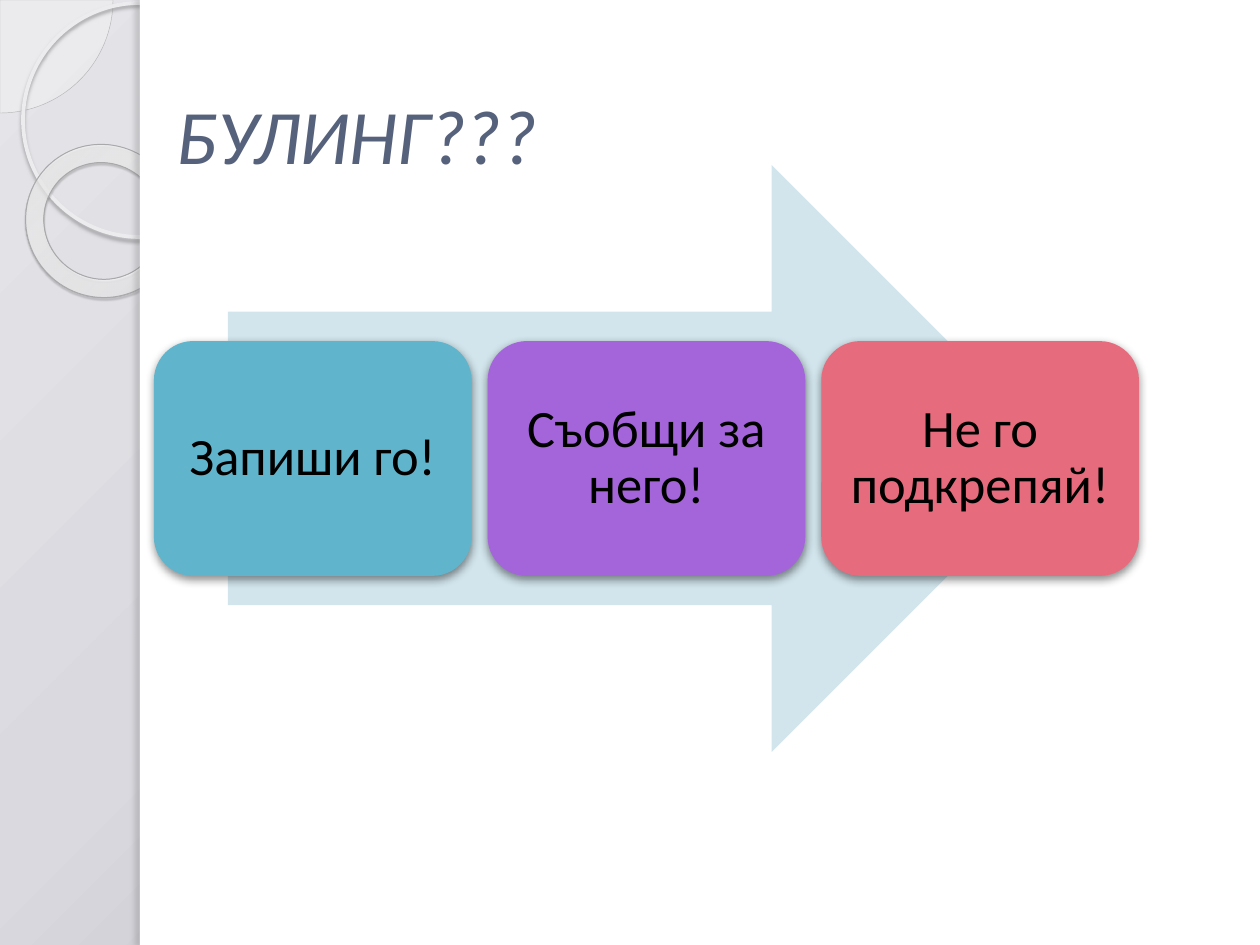
from dataclasses import dataclass

from lxml import etree
from pptx import Presentation
from pptx.dml.color import RGBColor
from pptx.enum.shapes import MSO_SHAPE
from pptx.enum.text import MSO_ANCHOR, PP_ALIGN
from pptx.oxml.ns import qn
from pptx.util import Pt

PX = 914400 / 126
PIE, OVAL, DONUT = MSO_SHAPE.PIE, MSO_SHAPE.OVAL, MSO_SHAPE.DONUT
RECTANGLE, ROUNDED = MSO_SHAPE.RECTANGLE, MSO_SHAPE.ROUNDED_RECTANGLE
RIGHT_ARROW = MSO_SHAPE.RIGHT_ARROW
MIDDLE, CENTER, LEFT = MSO_ANCHOR.MIDDLE, PP_ALIGN.CENTER, PP_ALIGN.LEFT


@dataclass(frozen=True)
class Theme:
    """Colours, type and shadows of the slide."""
    font: str = "Calibri"
    title_size: int = 44
    card_size: int = 30
    title: str = "56617C"
    text: str = "000000"
    panel: str = "FFFFFF"
    arrow: str = "D2E5EC"
    cards: tuple = ("60B5CC", "A465DA", "E66C7D")
    backdrop: tuple = ((0, "E5E5E9", 100), (40, "D9D9DF", 100), (100, "A2A2A7", 100))
    donut: tuple = ((0, "FAFAFA", 70), (70, "FDFDFD", 55), (100, "B9B9BF", 60))
    quarter: str = "F8F8F8"
    quarter_line: tuple = ("B5B5B8", 0.25)
    ring_line: tuple = ("ECECEF", 2.15)
    donut_line: tuple = ("A9A9AC", 0.58)
    ring_shadow: tuple = ("9C9C9F", 85, 2, 2, 90)
    donut_shadow: tuple = ("4E4E4F", 35, 1, 1.2, 75)
    edge_shadow: tuple = ("69696A", 25, 3, 3, 180)
    card_shadow: tuple = ("000000", 43, 5, 2, 90)


THEME = Theme()


def px(length):
    """Turn px into EMU."""
    return round(length * PX)


def add_color(parent, color, opacity):
    """Append a colour with an opacity in percent."""
    node = etree.SubElement(parent, qn("a:srgbClr"), val=color)
    if opacity < 100:
        etree.SubElement(node, qn("a:alpha"), val=str(opacity * 1000))


def use_radial(solid, stops, focus):
    """Replace a solid fill with a circular gradient around a focus box."""
    gradient = etree.Element(qn("a:gradFill"), rotWithShape="1")
    stop_list = etree.SubElement(gradient, qn("a:gsLst"))
    for position, color, opacity in stops:
        stop = etree.SubElement(stop_list, qn("a:gs"), pos=str(position * 1000))
        add_color(stop, color, opacity)
    circle = etree.SubElement(gradient, qn("a:path"), path="circle")
    sides = {side: str(value * 1000) for side, value in zip("ltrb", focus)}
    etree.SubElement(circle, qn("a:fillToRect"), **sides)
    solid.getparent().replace(solid, gradient)


def add_figure(slide, kind, box, fill=None, opacity=100, line=None, shadow=None):
    """Add a preset shape with its fill, line and shadow."""
    figure = slide.shapes.add_shape(kind, *map(px, box))
    figure.shadow.inherit = False
    if fill:
        figure.fill.solid()
        figure.fill.fore_color.rgb = RGBColor.from_string(fill)
        if opacity < 100:
            color = figure._element.xpath("./p:spPr/a:solidFill/a:srgbClr")[0]
            etree.SubElement(color, qn("a:alpha"), val=str(opacity * 1000))
    else:
        figure.fill.background()
    if line:
        figure.line.color.rgb = RGBColor.from_string(line[0])
        figure.line.width = Pt(line[1])
    else:
        figure.line.fill.background()
    if shadow:
        color, strength, blur, distance, angle = shadow
        effects = figure._element.xpath("./p:spPr/a:effectLst")[0]
        outer = etree.SubElement(effects, qn("a:outerShdw"), blurRad=str(Pt(blur)),
                                 dist=str(Pt(distance)), dir=str(angle * 60000),
                                 algn="ctr", rotWithShape="0")
        add_color(outer, color, strength)
    return figure


def write(frame, words, size, color, align, italic=False):
    """Write one wrapped, vertically centred paragraph."""
    frame.word_wrap = True
    frame.vertical_anchor = MIDDLE
    paragraph = frame.paragraphs[0]
    paragraph.alignment = align
    run = paragraph.add_run()
    run.text = words
    run.font.name = THEME.font
    run.font.size = Pt(size)
    run.font.italic = italic
    run.font.color.rgb = RGBColor.from_string(color)
    return paragraph


def draw_sidebar(slide, box):
    """Draw the gradient backdrop, its circles and the white panel beside them."""
    left, top, width, height = box
    slide.background.fill.solid()
    slide.background.fill.fore_color.rgb = RGBColor.from_string(THEME.panel)
    use_radial(slide.element.xpath(".//p:bgPr/a:solidFill")[0],
               THEME.backdrop, (-24, -20, 124, 120))
    quarter = add_figure(slide, PIE, (left - 113, top - 113, 226, 226),
                         THEME.quarter, 33, THEME.quarter_line)
    quarter.adjustments[0], quarter.adjustments[1] = 0, 54
    add_figure(slide, OVAL, (left + 23, top + 3, 234, 234),
               line=THEME.ring_line, shadow=THEME.ring_shadow)
    donut = add_figure(slide, DONUT, (left + 25, top + 145, 155, 152), THEME.panel,
                       line=THEME.donut_line, shadow=THEME.donut_shadow)
    donut.adjustments[0] = 0.12
    donut.rotation = 38.6
    use_radial(donut._element.xpath("./p:spPr/a:solidFill")[0],
               THEME.donut, (-408, -50, 508, 150))
    panel_left = left + width
    add_figure(slide, RECTANGLE, (panel_left, top, 1260 - panel_left, height), THEME.panel)
    add_figure(slide, RECTANGLE, (panel_left, top, 10, height), THEME.panel,
               shadow=THEME.edge_shadow)


def draw_steps(slide, box, steps):
    """Draw the wide arrow with evenly spaced step cards over it."""
    left, top, width, height = box
    gap = 16
    card_width = (width - gap * (len(steps) - 1)) / len(steps)
    card_height = height * 0.4
    add_figure(slide, RIGHT_ARROW, (left + 74, top, width * 0.85, height), THEME.arrow)
    for index, (words, color) in enumerate(zip(steps, THEME.cards)):
        card_left = left + index * (card_width + gap)
        card = add_figure(slide, ROUNDED,
                          (card_left, top + height * 0.3, card_width, card_height),
                          color, shadow=THEME.card_shadow)
        frame = card.text_frame
        frame.margin_left = frame.margin_right = px(4)
        frame.margin_top = frame.margin_bottom = px(4)
        paragraph = write(frame, words, THEME.card_size, THEME.text, CENTER)
        paragraph.line_spacing = 0.9


def draw_title(slide, box, words):
    """Write the slide title."""
    title = slide.shapes.add_textbox(*map(px, box))
    write(title.text_frame, words, THEME.title_size, THEME.title, LEFT, italic=True)


def main():
    """Build and save the slide."""
    deck = Presentation()
    deck.slide_width, deck.slide_height = px(1260), px(945)
    slide = deck.slides.add_slide(deck.slide_layouts[6])
    draw_sidebar(slide, (0, 0, 140, 945))
    draw_steps(slide, (154, 165, 985, 587),
               ("Запиши го!", "Съобщи за него!", "Не го подкрепяй!"))
    draw_title(slide, (164, 55, 1033, 158), "БУЛИНГ???")
    deck.save("out.pptx")


if __name__ == "__main__":
    main()
